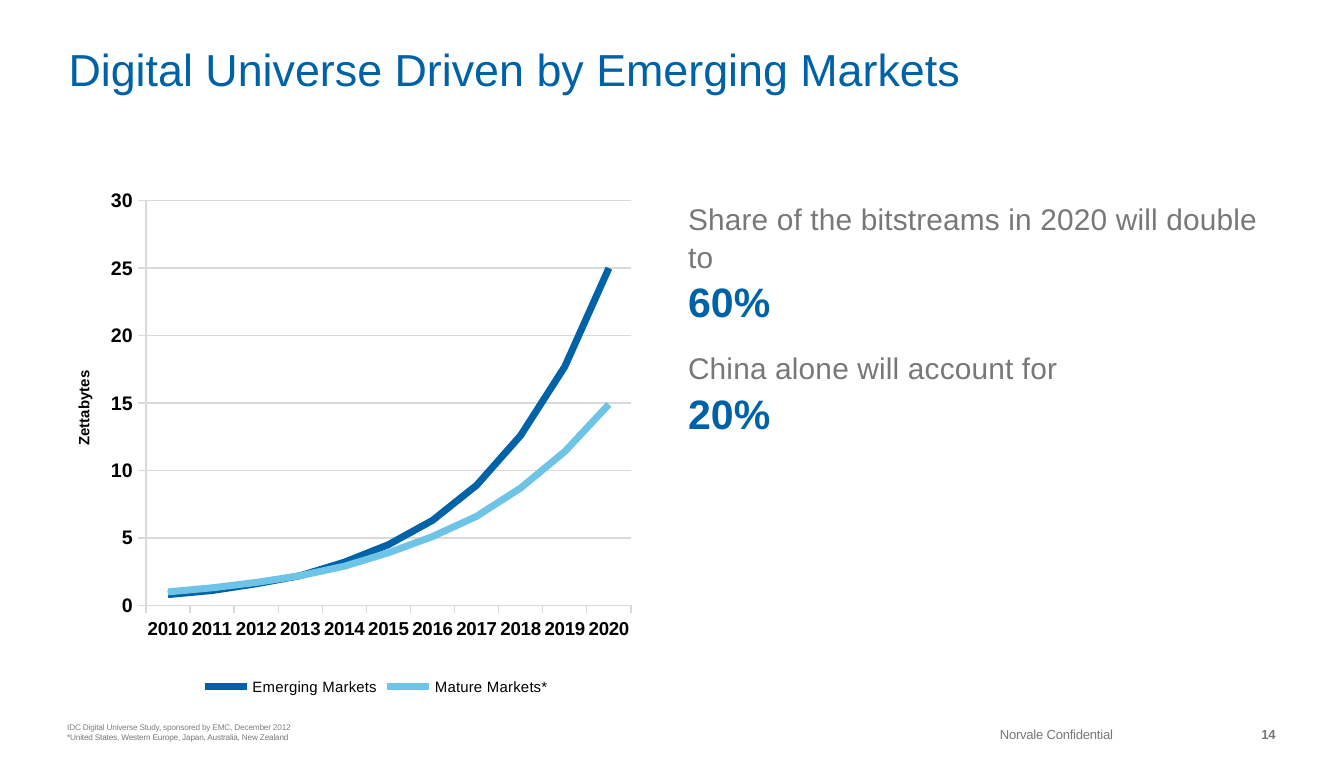
from pptx import Presentation, util as u
from pptx.chart import data as cd
from pptx.dml import color as dc
from pptx.enum import chart as ec, text as et
from pptx.oxml import parse_xml
from pptx.oxml.ns import nsdecls

COLS, ROWS = 100, 56.3
HEX = {"blue": "0062A6", "line": "0063A7", "sky": "6EC4E7", "grey": "78777A",
       "mid": "808080", "rule": "D9D9D9", "black": "000000"}
YEARS = [str(y) for y in range(2010, 2021)]
LINES = {
    "Emerging Markets": ("line", [0.8, 1.1, 1.6, 2.2, 3.2, 4.5, 6.3, 8.9, 12.6, 17.7, 25]),
    "Mature Markets*": ("sky", [1, 1.3, 1.7, 2.2, 2.9, 3.9, 5.1, 6.6, 8.7, 11.4, 14.9]),
}
PLOT = {"x": 0.084, "y": 0.042, "w": 0.876, "h": 0.776}


def rgb(name):
    return dc.RGBColor.from_string(HEX[name])


def put(item, vals):
    for key, val in vals.items():
        setattr(item, key, val)


class Deck:
    face = "Arial"

    def __init__(self):
        self.prs = Presentation()
        put(self.prs, {"slide_width": u.Inches(10), "slide_height": u.Inches(5.63)})
        self.slide = self.prs.slides.add_slide(self.prs.slide_layouts[6])

    def place(self, x, y, w, h):
        wide, high = self.prs.slide_width / COLS, self.prs.slide_height / ROWS
        return [round(v) for v in (x * wide, y * high, w * wide, h * high)]

    def font(self, font, size, tone="black", bold=False):
        put(font, {"name": self.face, "size": u.Pt(size), "bold": bold})
        font.color.rgb = rgb(tone)

    def text(self, spot, paras, anchor="TOP", align="LEFT", gap=0, lead=1.0,
             space=0, wrap=True, turn=0):
        box = self.slide.shapes.add_textbox(*self.place(*spot))
        box.rotation = turn
        frame = box.text_frame
        put(frame, {"margin_left": 0, "margin_right": 0, "margin_top": 0, "margin_bottom": 0,
                    "word_wrap": wrap, "vertical_anchor": getattr(et.MSO_ANCHOR, anchor)})
        for i, runs in enumerate(paras):
            para = frame.add_paragraph() if i else frame.paragraphs[0]
            put(para, {"alignment": getattr(et.PP_ALIGN, align), "line_spacing": lead,
                       "space_before": u.Pt(gap if i else 0)})
            for j, (words, *style) in enumerate(runs):
                if j:
                    para.add_line_break()
                run = para.add_run()
                run.text = words
                self.font(run.font, *style)
                if space:
                    run.font._element.set("spc", str(space))

    def axis(self, axis, size):
        axis.major_tick_mark = ec.XL_TICK_MARK.OUTSIDE
        self.rule(axis.format.line, "rule", 0.75)
        self.font(axis.tick_labels.font, size, bold=True)

    def rule(self, line, tone, width):
        line.color.rgb = rgb(tone)
        line.width = u.Pt(width)

    def chart(self, spot):
        data = cd.CategoryChartData()
        data.categories = YEARS
        for name, (_, vals) in LINES.items():
            data.add_series(name, vals)
        chart = self.slide.shapes.add_chart(
            ec.XL_CHART_TYPE.LINE, *self.place(*spot), data).chart
        put(chart, {"has_title": False, "has_legend": True})
        self.font(chart.font, 10)
        put(chart.legend, {"position": ec.XL_LEGEND_POSITION.BOTTOM, "include_in_layout": False})
        self.font(chart.legend.font, 8)
        self.axis(chart.category_axis, 10)
        axis = chart.value_axis
        self.axis(axis, 10.5)
        put(axis, {"minimum_scale": 0, "maximum_scale": 30, "major_unit": 5,
                   "has_major_gridlines": True})
        axis.tick_labels.number_format = "0"
        axis.tick_labels.number_format_is_linked = False
        self.rule(axis.major_gridlines.format.line, "rule", 0.75)
        plot = chart.plots[0]
        plot.vary_by_categories = False
        for line, (tone, _) in zip(plot.series, LINES.values()):
            line.smooth = False
            line.marker.style = ec.XL_MARKER_STYLE.NONE
            self.rule(line.format.line, tone, 3.75)
        self.frame(chart._chartSpace.chart.plotArea)

    def frame(self, area):
        for old in area.findall("{*}layout"):
            area.remove(old)
        modes = "".join(f'<c:{k}Mode val="edge"/>' for k in "xy")
        sizes = "".join(f'<c:{k} val="{v}"/>' for k, v in PLOT.items())
        area.insert(0, parse_xml(
            f'<c:layout {nsdecls("c")}><c:manualLayout><c:layoutTarget val="inner"/>'
            f'{modes}{sizes}</c:manualLayout></c:layout>'))


def main():
    deck = Deck()
    deck.text((5.1, 0.1, 89.8, 7),
              [[("Digital Universe Driven by Emerging Markets", 24, "blue")]], anchor="BOTTOM")
    deck.chart((7.4, 13.3, 41.2, 38.8))
    deck.text((3.4, 29.7, 5.6, 1.3), [[("Zettabytes", 8, "black", True)]],
              anchor="MIDDLE", align="CENTER", wrap=False, turn=270)
    facts = {"Share of the bitstreams in 2020 will double to": "60%",
             "China alone will account for": "20%"}
    deck.text((51.2, 14.8, 43.7, 36.6),
              [[(lead, 16, "grey"), (share, 22, "blue", True)] for lead, share in facts.items()],
              gap=12, lead=1.05, space=10)
    deck.text((5, 54, 66.9, 1.2),
              [[("IDC Digital Universe Study, sponsored by EMC, December 2012", 4.4, "mid"),
                ("*United States, Western Europe, Japan, Australia, New Zealand", 4.4, "grey")]],
              anchor="BOTTOM", lead=1.05, space=-10)
    deck.text((74.4, 54, 10.6, 1.2), [[("Norvale Confidential", 7, "grey")]], space=-10)
    deck.text((84.4, 54, 10.5, 1.2), [[("14", 7, "grey", True)]], align="RIGHT", space=-10)
    deck.prs.save("out.pptx")


if __name__ == "__main__":
    main()
